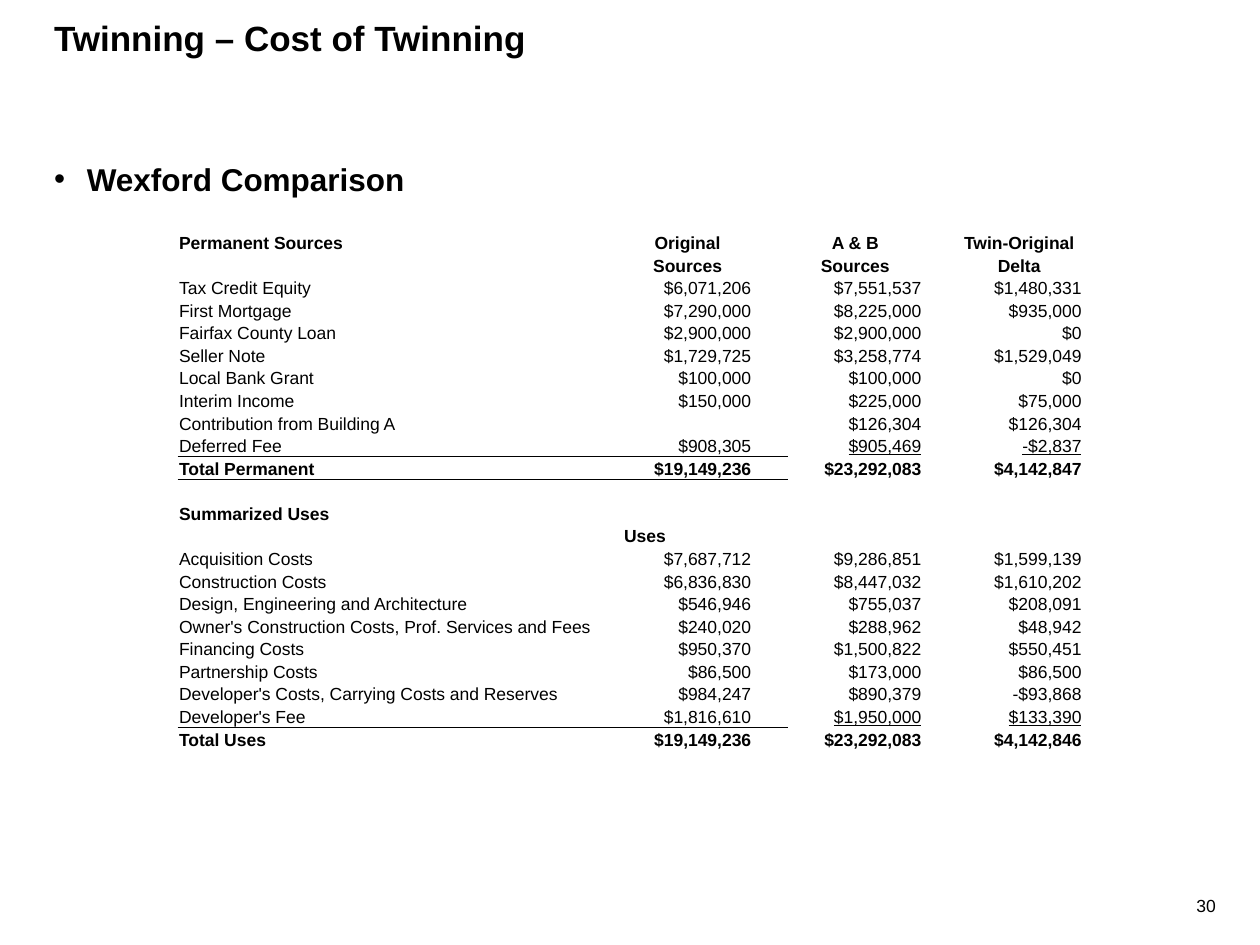
import pptx
import pptx.util
import pptx.dml.color
import pptx.enum.text
import pptx.oxml.ns
from lxml import etree
from pptx.util import Cm, Pt

ALIGN = pptx.enum.text.PP_ALIGN
ANCHOR = pptx.enum.text.MSO_ANCHOR
qn = pptx.oxml.ns.qn
FONT = "Arial"
INK = "000000"
NO_STYLE = "{2D5ABB26-0587-4C30-8999-92F81FD0307C}"

TITLE = "Twinning – Cost of Twinning"
SUBJECT = "Wexford Comparison"
PAGE = "30"

SOURCES = [
    ("Tax Credit Equity", "$6,071,206", "$7,551,537", "$1,480,331"),
    ("First Mortgage", "$7,290,000", "$8,225,000", "$935,000"),
    ("Fairfax County Loan", "$2,900,000", "$2,900,000", "$0"),
    ("Seller Note", "$1,729,725", "$3,258,774", "$1,529,049"),
    ("Local Bank Grant", "$100,000", "$100,000", "$0"),
    ("Interim Income", "$150,000", "$225,000", "$75,000"),
    ("Contribution from Building A", "", "$126,304", "$126,304"),
    ("Deferred Fee", "$908,305", "$905,469", "-$2,837"),
]
USES = [
    ("Acquisition Costs", "$7,687,712", "$9,286,851", "$1,599,139"),
    ("Construction Costs", "$6,836,830", "$8,447,032", "$1,610,202"),
    ("Design, Engineering and Architecture", "$546,946", "$755,037", "$208,091"),
    ("Owner's Construction Costs, Prof. Services and Fees", "$240,020", "$288,962", "$48,942"),
    ("Financing Costs", "$950,370", "$1,500,822", "$550,451"),
    ("Partnership Costs", "$86,500", "$173,000", "$86,500"),
    ("Developer's Costs, Carrying Costs and Reserves", "$984,247", "$890,379", "-$93,868"),
    ("Developer's Fee", "$1,816,610", "$1,950,000", "$133,390"),
]
SECTIONS = [
    ("head", [("Permanent Sources", "Original", "A & B", "Twin-Original"),
              ("", "Sources", "Sources", "Delta")]),
    ("item", SOURCES[:-1]),
    ("last", SOURCES[-1:]),
    ("total", [("Total Permanent", "$19,149,236", "$23,292,083", "$4,142,847")]),
    ("label", [("", "", "", ""), ("Summarized Uses", "", "", ""), ("", "Uses", "", "")]),
    ("item", USES[:-1]),
    ("last", USES[-1:]),
    ("total", [("Total Uses", "$19,149,236", "$23,292,083", "$4,142,846")]),
]
ROWS = [(kind, row) for kind, rows in SECTIONS for row in rows]
COLUMN_WIDTHS = [8.97, 2.62, 0.71, 2.72, 0.66, 2.57]
VALUE_COLUMNS = [0, 1, 3, 5]
RULED_COLUMNS = 3
ROW_HEIGHT = 0.45
ALIGNMENTS = {"head": ALIGN.CENTER, "label": ALIGN.LEFT}


def color(value):
    return pptx.dml.color.RGBColor.from_string(value)


def style(font, size, bold=False, underline=False):
    font.name = FONT
    font.size = Pt(size)
    font.bold = bold
    font.underline = underline
    font.color.rgb = color(INK)


def add_text(slide, text, place, size, bold=False):
    box = slide.shapes.add_textbox(*[Cm(length) for length in place])
    box.text_frame.word_wrap = True
    paragraph = box.text_frame.paragraphs[0]
    paragraph.text = text
    style(paragraph.runs[0].font, size, bold)
    return paragraph


def add_bullet(paragraph, indent):
    properties = paragraph._p.get_or_add_pPr()
    properties.set("marL", str(Cm(indent)))
    properties.set("indent", str(-Cm(indent)))
    etree.SubElement(properties, qn("a:buFont"), typeface=FONT)
    etree.SubElement(properties, qn("a:buChar"), char="•")
    paragraph.line_spacing = 1.2


def add_border(cell, side):
    line = etree.Element(qn(side), w=str(Pt(0.5)))
    fill = etree.SubElement(line, qn("a:solidFill"))
    etree.SubElement(fill, qn("a:srgbClr"), val=INK)
    cell._tc.get_or_add_tcPr().insert(0, line)


def fill_cell(cell, text, kind, column):
    cell.margin_left = cell.margin_right = cell.margin_top = Cm(0.03)
    cell.margin_bottom = 0
    cell.vertical_anchor = ANCHOR.BOTTOM
    cell.fill.background()
    paragraph = cell.text_frame.paragraphs[0]
    if text:
        paragraph.text = text
        paragraph.alignment = ALIGNMENTS.get(kind, ALIGN.RIGHT) if column else ALIGN.LEFT
        underline = kind == "last" and column >= RULED_COLUMNS
        style(paragraph.runs[0].font, 10, kind in ("head", "label", "total"), underline)
    else:
        etree.SubElement(paragraph._p, qn("a:endParaRPr"), sz="1000")
    if column < RULED_COLUMNS and kind in ("last", "total"):
        add_border(cell, "a:lnB" if kind == "last" else "a:lnT")


def add_comparison(slide):
    frame = slide.shapes.add_table(
        len(ROWS), len(COLUMN_WIDTHS), Cm(3.58), Cm(4.65),
        Cm(sum(COLUMN_WIDTHS)), Cm(ROW_HEIGHT * len(ROWS)))
    table = frame.table
    table.first_row = table.horz_banding = False
    table._tbl.tblPr.find(qn("a:tableStyleId")).text = NO_STYLE
    for column, width in zip(table.columns, COLUMN_WIDTHS):
        column.width = Cm(width)
    for row, (kind, values) in zip(table.rows, ROWS):
        row.height = Cm(ROW_HEIGHT)
        texts = dict(zip(VALUE_COLUMNS, values))
        for column, cell in enumerate(row.cells):
            fill_cell(cell, texts.get(column, ""), kind, column)


def main():
    deck = pptx.Presentation()
    deck.slide_width, deck.slide_height = Cm(25.4), Cm(19.05)
    slide = deck.slides.add_slide(deck.slide_layouts[6])
    add_text(slide, PAGE, (23.62, 17.91, 1.14, 0.69), 10).alignment = ALIGN.RIGHT
    add_text(slide, TITLE, (0.84, 0.2, 23.7, 1.96), 20, True)
    subject = add_text(slide, SUBJECT, (0.84, 2.95, 23.7, 13.79), 18, True)
    add_bullet(subject, 0.66)
    add_comparison(slide)
    deck.save("out.pptx")


if __name__ == "__main__":
    main()
